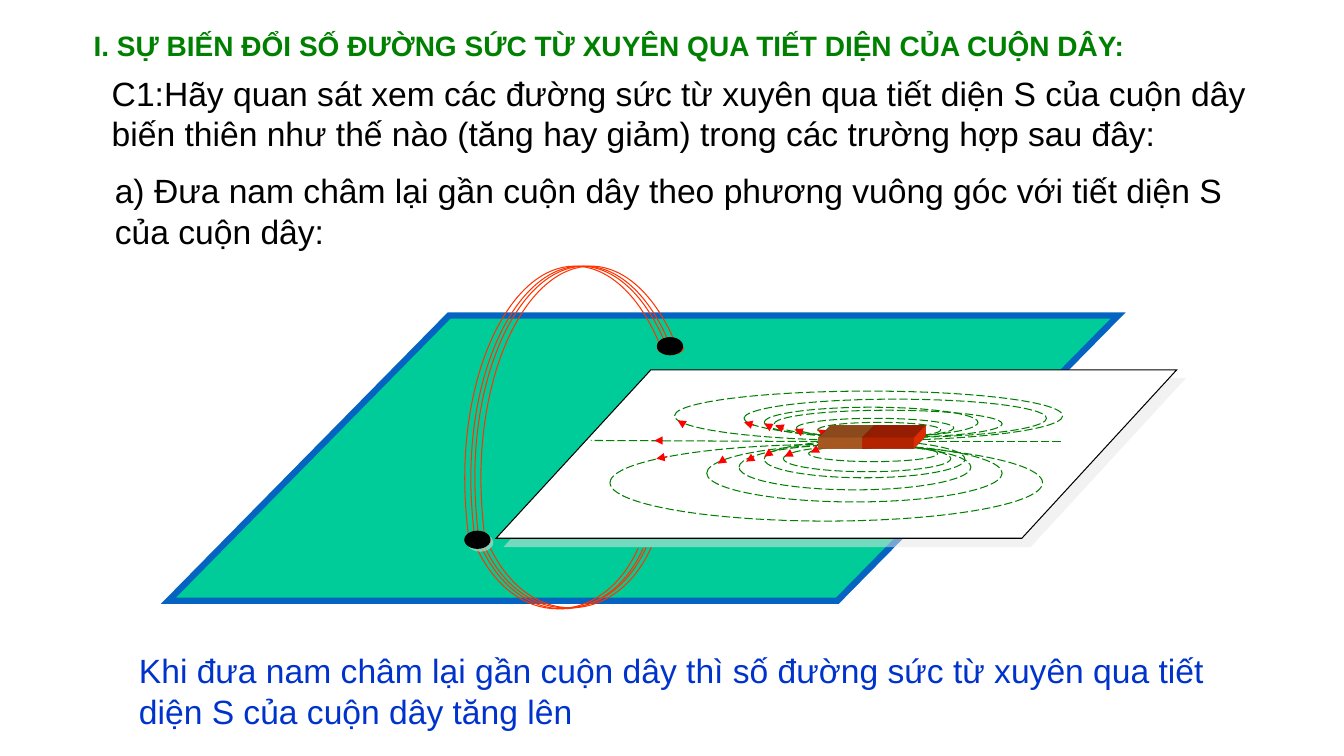
from copy import deepcopy
from typing import Any, NamedTuple, Optional

from pptx import Presentation
from pptx.dml.color import RGBColor
from pptx.enum.dml import MSO_LINE
from pptx.enum.shapes import MSO_CONNECTOR, MSO_SHAPE
from pptx.enum.text import MSO_AUTO_SIZE
from pptx.oxml.ns import qn
from pptx.util import Inches, Pt
from lxml.etree import SubElement

BLACK = RGBColor(0x00, 0x00, 0x00)
WHITE = RGBColor(0xFF, 0xFF, 0xFF)
GREEN = RGBColor(0x00, 0x80, 0x00)
BLUE = RGBColor(0x00, 0x33, 0xCC)
TABLE_GREEN = RGBColor(0x00, 0xCC, 0x99)
TABLE_EDGE = RGBColor(0x05, 0x63, 0xC1)
ORANGE = RGBColor(0xED, 0x7D, 0x31)
RED_ORANGE = RGBColor(0xFF, 0x33, 0x00)
ARROW_RED = RGBColor(0xFF, 0x00, 0x00)
SHADOW_GREY = RGBColor(0xE7, 0xE6, 0xE6)

Point = tuple[float, float]


class Box(NamedTuple):
    left: float
    top: float
    width: float
    height: float


class Stroke(NamedTuple):
    color: RGBColor
    width: float = 0.75
    dash: Optional[MSO_LINE] = None


class Segment(NamedTuple):
    start: Point
    end: Point


class Turn(NamedTuple):
    """A wire arc: start point and Bezier control points, and the ellipse centre."""
    points: list[Point]
    center: Point
    offsets: list[Point]


class Caption(NamedTuple):
    box: Box
    text: str
    font: dict[str, Any]
    color: RGBColor


WIRE_STROKE = Stroke(RED_ORANGE)
FIELD_STROKE = Stroke(GREEN, dash=MSO_LINE.LONG_DASH)
BODY_FONT = {"name": "Arial", "size": Pt(24), "bold": False}
TITLE_FONT = {"name": "Arial", "size": Pt(20), "bold": True}

CAPTIONS = [
    Caption(Box(1.01, 0.67, 11.52, 0.91),
            "C1:Hãy quan sát xem các đường sức từ xuyên qua tiết diện S của cuộn dây "
            "biến thiên như thế nào (tăng hay giảm) trong các trường hợp sau đây:", BODY_FONT, BLACK),
    Caption(Box(1.04, 1.64, 11.49, 0.91),
            "a) Đưa nam châm lại gần cuộn dây theo phương vuông góc với tiết diện S "
            "của cuộn dây:", BODY_FONT, BLACK),
    Caption(Box(1.28, 6.4, 10.96, 0.91),
            "Khi đưa nam châm lại gần cuộn dây thì số đường sức từ xuyên qua tiết "
            "diện S của cuộn dây tăng lên", BODY_FONT, BLUE),
    Caption(Box(0.83, 0.23, 10.83, 0.44),
            "I. SỰ BIẾN ĐỔI SỐ ĐƯỜNG SỨC TỪ XUYÊN QUA TIẾT DIỆN CỦA CUỘN DÂY:", TITLE_FONT, GREEN),
]

LOWER_TURN = Turn(
    [(4.81, 5.43), (4.99, 5.81), (5.29, 6.03), (5.61, 6.03),
     (5.94, 6.03), (6.24, 5.81), (6.41, 5.43)],
    (5.61, 4.77), [(0, 0), (-0.03, 0.01), (0.05, 0), (-0.08, 0.01)])
UPPER_TURN = Turn(
    [(6.68, 3.51), (6.48, 2.96), (6.15, 2.64), (5.8, 2.64), (5.2, 2.64),
     (4.71, 3.58), (4.71, 4.74), (4.71, 4.97), (4.73, 5.2), (4.76, 5.42)],
    (5.8, 4.74), [(0, 0), (-0.04, 0), (0.06, 0), (-0.1, 0)])
WIRE_ENDS = [Box(4.61, 5.32, 0.26, 0.09), Box(6.52, 3.41, 0.26, 0.1)]

FIELD_LOOPS = [
    Box(6.69, 3.88, 3.85, 0.49), Box(8.11, 4.19, 1.22, 0.15), Box(7.9, 4.15, 1.56, 0.19),
    Box(7.68, 4.07, 2.26, 0.27), Box(7.58, 4.04, 2.12, 0.3), Box(6.05, 4.41, 4.29, 0.76),
    Box(8.02, 4.42, 1.28, 0.16), Box(7.77, 4.42, 1.66, 0.26), Box(7.58, 4.37, 1.99, 0.37),
    Box(7.01, 4.41, 2.93, 0.57), Box(7.38, 3.96, 3, 0.38), Box(7.33, 4.41, 2.3, 0.45),
]
AXIS_LINES = [Segment((9.2, 4.38), (10.54, 4.38)), Segment((8.12, 4.38), (5.86, 4.37))]
FIELD_ARROWS = [
    Segment((6.57, 4.37), (6.49, 4.37)), Segment((6.62, 4.53), (6.51, 4.55)),
    Segment((7.18, 4.56), (7.12, 4.6)), Segment((7.48, 4.53), (7.4, 4.58)),
    Segment((7.64, 4.49), (7.58, 4.53)), Segment((7.86, 4.49), (7.78, 4.53)),
    Segment((8.12, 4.45), (8.04, 4.49)), Segment((6.77, 4.2), (6.72, 4.17)),
    Segment((7.48, 4.22), (7.38, 4.19)), Segment((7.65, 4.24), (7.58, 4.2)),
    Segment((7.77, 4.25), (7.69, 4.22)), Segment((7.96, 4.29), (7.88, 4.26)),
    Segment((8.19, 4.31), (8.11, 4.26)),
]


def apply_stroke(line: Any, stroke: Stroke) -> None:
    line.color.rgb = stroke.color
    values = {"width": Pt(stroke.width), "dash_style": stroke.dash}
    for name, value in values.items():
        setattr(line, name, value)
    SubElement(line._get_or_add_ln(), qn("a:miter"), lim="800000")


def finish(shape: Any, fill: Optional[RGBColor], stroke: Optional[Stroke]) -> None:
    """Give a shape its fill and outline and drop the theme shadow."""
    shape.shadow.inherit = False
    if fill is None:
        shape.fill.background()
    else:
        shape.fill.solid()
        shape.fill.fore_color.rgb = fill
    if stroke is None:
        shape.line.fill.background()
    else:
        apply_stroke(shape.line, stroke)


def add_preset(shapes: Any, kind: MSO_SHAPE, box: Box, fill: Optional[RGBColor] = None,
               stroke: Optional[Stroke] = None) -> Any:
    shape = shapes.add_shape(kind, *map(Inches, box))
    finish(shape, fill, stroke)
    return shape


def cast_shadow(shape: Any, distance: float) -> None:
    effects = shape._element.spPr.find(qn("a:effectLst"))
    shadow = SubElement(effects, qn("a:outerShdw"), dist=str(Pt(distance)),
                        dir=str(45 * 60000), algn="ctr", rotWithShape="0")
    color = SubElement(shadow, qn("a:srgbClr"), val=str(SHADOW_GREY))
    SubElement(color, qn("a:alpha"), val="50000")


def extrude(shape: Any, color: RGBColor, depth: float) -> None:
    """Turn a flat shape into an oblique block that recedes to the top right."""
    properties = shape._element.spPr
    scene = SubElement(properties, qn("a:scene3d"))
    SubElement(scene, qn("a:camera"), prst="legacyObliqueTopRight")
    SubElement(scene, qn("a:lightRig"), rig="legacyFlat3", dir="b")
    block = SubElement(properties, qn("a:sp3d"), extrusionH=str(Inches(depth)),
                       prstMaterial="legacyMatte")
    for side in ("a:bevelT", "a:bevelB"):
        SubElement(block, qn(side), w="13500", h="13500", prst="angle")
    SubElement(SubElement(block, qn("a:extrusionClr")), qn("a:srgbClr"), val=str(color))


def bend(sector: Any) -> None:
    """Join line triples into Bezier curves; stroke the arc but not the sector's sides."""
    lines = sector.findall(qn("a:lnTo"))[:-1]
    for first in range(0, len(lines), 3):
        curve = SubElement(sector, qn("a:cubicBezTo"))
        lines[first].addprevious(curve)
        for line in lines[first:first + 3]:
            curve.append(line[0])
            sector.remove(line)
    arc = deepcopy(sector)
    for side in list(arc)[-2:]:
        arc.remove(side)
    arc.set("fill", "none")
    sector.set("stroke", "0")
    sector.addprevious(arc)


def add_turns(shapes: Any, turn: Turn) -> None:
    for dx, dy in turn.offsets:
        corners = [(Inches(x + dx), Inches(y + dy)) for x, y in turn.points + [turn.center]]
        builder = shapes.build_freeform(*corners[0])
        builder.add_line_segments(corners[1:], close=True)
        wire = builder.convert_to_shape()
        finish(wire, None, WIRE_STROKE)
        bend(wire._element.spPr.find(".//" + qn("a:path")))


def add_segment(shapes: Any, segment: Segment, stroke: Stroke, arrow: bool = False) -> None:
    line = shapes.add_connector(MSO_CONNECTOR.STRAIGHT, *map(Inches, segment.start + segment.end))
    apply_stroke(line.line, stroke)
    if arrow:
        SubElement(line.line._get_or_add_ln(), qn("a:tailEnd"), type="triangle")
    SubElement(line._element.spPr, qn("a:effectLst"))


def add_caption(shapes: Any, caption: Caption) -> None:
    box = shapes.add_textbox(*map(Inches, caption.box))
    box.text_frame.word_wrap = True
    box.text_frame.auto_size = MSO_AUTO_SIZE.SHAPE_TO_FIT_TEXT
    span = box.text_frame.paragraphs[0].add_run()
    span.text = caption.text
    for name, value in caption.font.items():
        setattr(span.font, name, value)
    span.font.color.rgb = caption.color


def main() -> None:
    deck = Presentation()
    deck.slide_width, deck.slide_height = Inches(13.33), Inches(7.5)
    shapes = deck.slides.add_slide(deck.slide_layouts[6]).shapes

    table = add_preset(shapes, MSO_SHAPE.PARALLELOGRAM, Box(1.67, 3.13, 9.42, 2.83),
                       TABLE_GREEN, Stroke(TABLE_EDGE, 4.5))
    table.adjustments[0] = 0.984
    add_turns(shapes.add_group_shape().shapes, LOWER_TURN)

    field = shapes.add_group_shape().shapes
    card = add_preset(field, MSO_SHAPE.PARALLELOGRAM, Box(4.92, 3.67, 6.75, 1.67), WHITE, Stroke(BLACK))
    card.adjustments[0] = 0.919
    cast_shadow(card, 8.5)
    for loop in FIELD_LOOPS:
        add_preset(field, MSO_SHAPE.OVAL, loop, stroke=FIELD_STROKE)
    for axis in AXIS_LINES:
        add_segment(field, axis, FIELD_STROKE)
    for arrow in FIELD_ARROWS:
        add_segment(field, arrow, Stroke(ARROW_RED), arrow=True)
    for left, color in ((8.12, ORANGE), (8.55, RED_ORANGE)):
        pole = add_preset(field, MSO_SHAPE.RECTANGLE, Box(left, 4.34, 0.51, 0.11), color)
        extrude(pole, color, 0.34)

    upper_coil = shapes.add_group_shape().shapes
    add_turns(upper_coil, UPPER_TURN)
    for wire_end in WIRE_ENDS:
        add_preset(upper_coil, MSO_SHAPE.OVAL, wire_end, stroke=WIRE_STROKE)
    near_hole, _ = [add_preset(shapes, MSO_SHAPE.OVAL, Box(left, top, 0.25, 0.17), BLACK, Stroke(BLACK))
                    for left, top in ((4.61, 5.27), (6.52, 3.35))]
    cast_shadow(near_hole, 2.8)

    for caption in CAPTIONS:
        add_caption(shapes, caption)
    deck.save("out.pptx")


if __name__ == "__main__":
    main()
